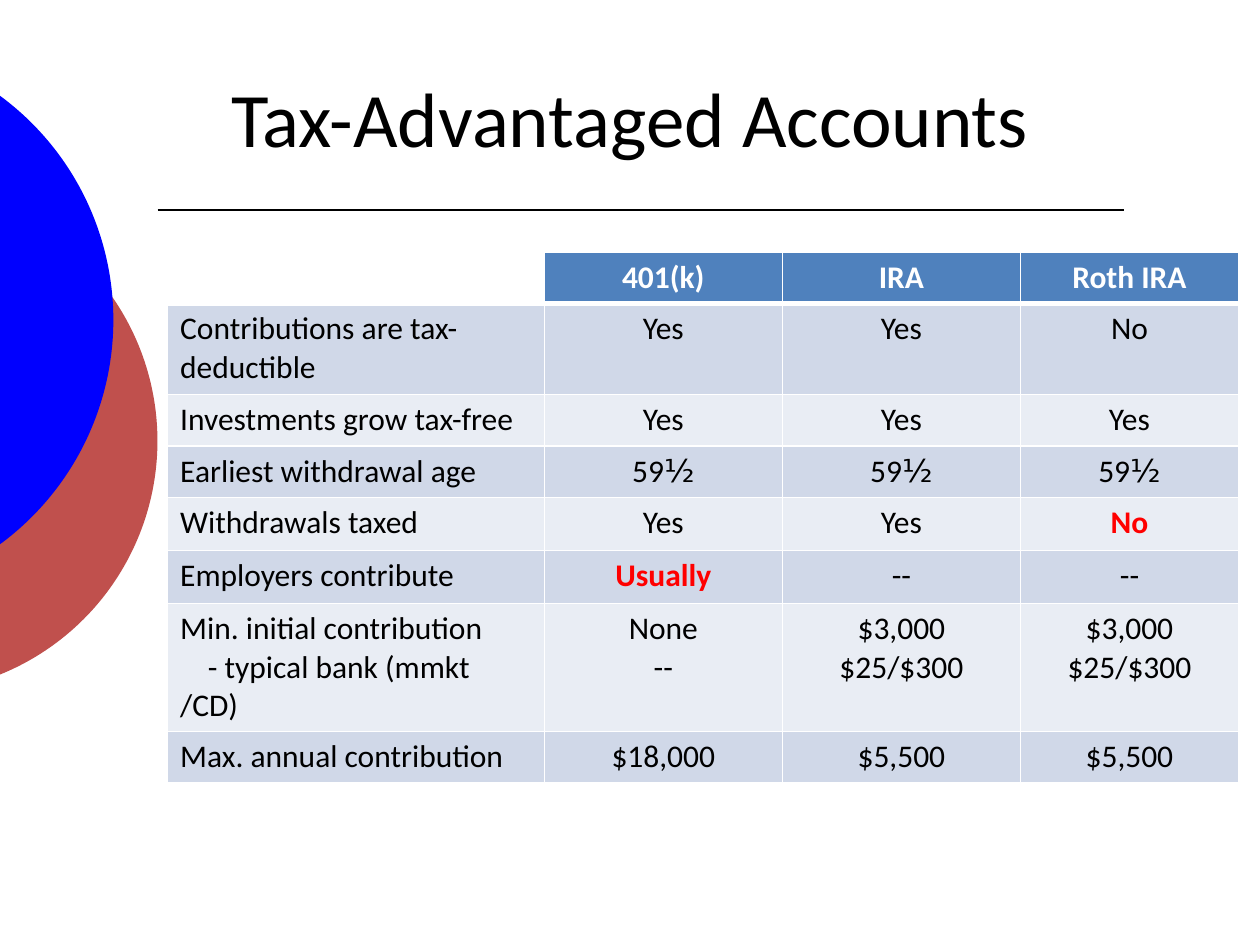
from dataclasses import dataclass
from math import acos, degrees

from lxml.etree import SubElement
from pptx import Presentation
from pptx.dml.color import RGBColor as RGB
from pptx.enum.shapes import MSO_CONNECTOR as LINK, MSO_SHAPE as SHAPE
from pptx.enum.text import MSO_ANCHOR as ANCHOR, PP_ALIGN as ALIGN
from pptx.oxml.ns import qn
from pptx.util import Pt

PX = 9144
BLACK = RGB(0, 0, 0)
WHITE = RGB(255, 255, 255)
RED = RGB(255, 0, 0)
BLUE = RGB(0, 0, 255)
BRICK = RGB(0xC0, 0x50, 0x4D)
HEAD = RGB(0x4F, 0x81, 0xBD)
BANDS = RGB(0xD0, 0xD8, 0xE8), RGB(0xE9, 0xED, 0xF4)
FONT = "Calibri"
ALT = "DejaVu Sans"


@dataclass
class Disc:
    """A disc that the left slide edge cuts off."""
    x: int
    y: int
    rad: int
    fill: RGB


@dataclass
class Row:
    """A table row, with the column to stress."""
    cells: list[str]
    high: int = 41
    hot: int = 0


DISCS = [Disc(-75, 350, 200, BRICK), Disc(-131, 254, 221, BLUE)]
COLS = [299, 189, 189, 173]
ROWS = [
    Row(["", "401(k)", "IRA", "Roth IRA"]),
    Row(["Contributions are tax-deductible", "Yes", "Yes", "No"], 72),
    Row(["Investments grow tax-free", "Yes", "Yes", "Yes"]),
    Row(["Earliest withdrawal age", "59½", "59½", "59½"]),
    Row(["Withdrawals taxed", "Yes", "Yes", "No"], 42, hot=3),
    Row(["Employers contribute", "Usually", "--", "--"], 42, hot=1),
    Row(["Min. initial contribution\n- typical bank (mmkt /CD)", "None\n--",
         "$3,000\n$25/$300", "$3,000\n$25/$300"], 72),
    Row(["Max. annual contribution", "$18,000", "$5,500", "$5,500"]),
]


def write(frame, text: str, size: int = 18, color: RGB = BLACK,
          bold: bool = False, align=ALIGN.CENTER) -> None:
    """Fill a text frame, with list lines indented."""
    para = frame.paragraphs[0]
    for num, line in enumerate(text.split("\n")):
        if line.startswith("- "):
            para = frame.add_paragraph()
            para._p.get_or_add_pPr().set("indent", str(22 * PX))
        elif num:
            para.add_line_break()
        para.alignment = align
        base, half, _ = line.partition("½")
        for part, face in ((base, FONT), (half, ALT)):
            if part:
                run = para.add_run()
                run.text = part
                font = run.font
                font.name, font.size, font.bold = face, Pt(size), bold
                font.color.rgb = color


def draw_disc(slide, disc: Disc) -> None:
    """Draw the part of a disc right of the slide edge."""
    size = 2 * disc.rad * PX
    shape = slide.shapes.add_shape(
        SHAPE.CHORD, (disc.x - disc.rad) * PX, (disc.y - disc.rad) * PX,
        size, size)
    edge = degrees(acos(-disc.x / disc.rad))
    shape.adjustments[0] = (360 - edge) * 0.6
    shape.adjustments[1] = edge * 0.6
    shape.shadow.inherit = False
    shape.fill.solid()
    shape.fill.fore_color.rgb = disc.fill
    shape.line.fill.background()


def draw_rule(slide, left: int, right: int, y: int) -> None:
    """Draw the thin line below the title."""
    rule = slide.shapes.add_connector(
        LINK.STRAIGHT, left * PX, y * PX, right * PX, y * PX)
    rule.line.color.rgb = BLACK
    rule.line.width = Pt(1.25)
    SubElement(rule._element.spPr, qn("a:effectLst"))


def edge_cell(cell, top: int, foot: int) -> None:
    """Give a cell white borders, widths in points."""
    props = cell._tc.get_or_add_tcPr()
    for side, wide in zip("LRTB", (1, 1, top, foot)):
        line = SubElement(props, qn(f"a:ln{side}"), w=str(Pt(wide)))
        fill = SubElement(line, qn("a:solidFill"))
        SubElement(fill, qn("a:srgbClr"), val=str(WHITE))


def draw_table(slide, left: int, top: int) -> None:
    """Draw the banded table of accounts."""
    high = sum(row.high for row in ROWS)
    grid = slide.shapes.add_table(
        len(ROWS), len(COLS), left * PX, top * PX,
        sum(COLS) * PX, high * PX).table
    for col, wide in zip(grid.columns, COLS):
        col.width = wide * PX
    for r, row in enumerate(ROWS):
        grid.rows[r].height = row.high * PX
        for c, text in enumerate(row.cells):
            cell = grid.cell(r, c)
            edge_cell(cell, 3 if r == 1 else 1, 1 if r else 3)
            if not text:
                cell.fill.background()
                continue
            hot = c > 0 and c == row.hot
            cell.fill.solid()
            cell.fill.fore_color.rgb = BANDS[(r - 1) % 2] if r else HEAD
            write(cell.text_frame, text, bold=hot or r == 0,
                  color=RED if hot else BLACK if r else WHITE,
                  align=ALIGN.CENTER if c else ALIGN.LEFT)


def main() -> None:
    """Build and save the slide."""
    deck = Presentation()
    deck.slide_width, deck.slide_height = 1000 * PX, 750 * PX
    slide = deck.slides.add_slide(deck.slide_layouts[5])
    draw_rule(slide, 125, 892, 167)
    for disc in DISCS:
        draw_disc(slide, disc)
    title = slide.shapes.title
    title.left, title.top = 50 * PX, 30 * PX
    title.width, title.height = 900 * PX, 125 * PX
    title.text_frame.vertical_anchor = ANCHOR.MIDDLE
    write(title.text_frame, "Tax-Advantaged Accounts", size=44)
    draw_table(slide, 133, 200)
    deck.save("out.pptx")


if __name__ == "__main__":
    main()
